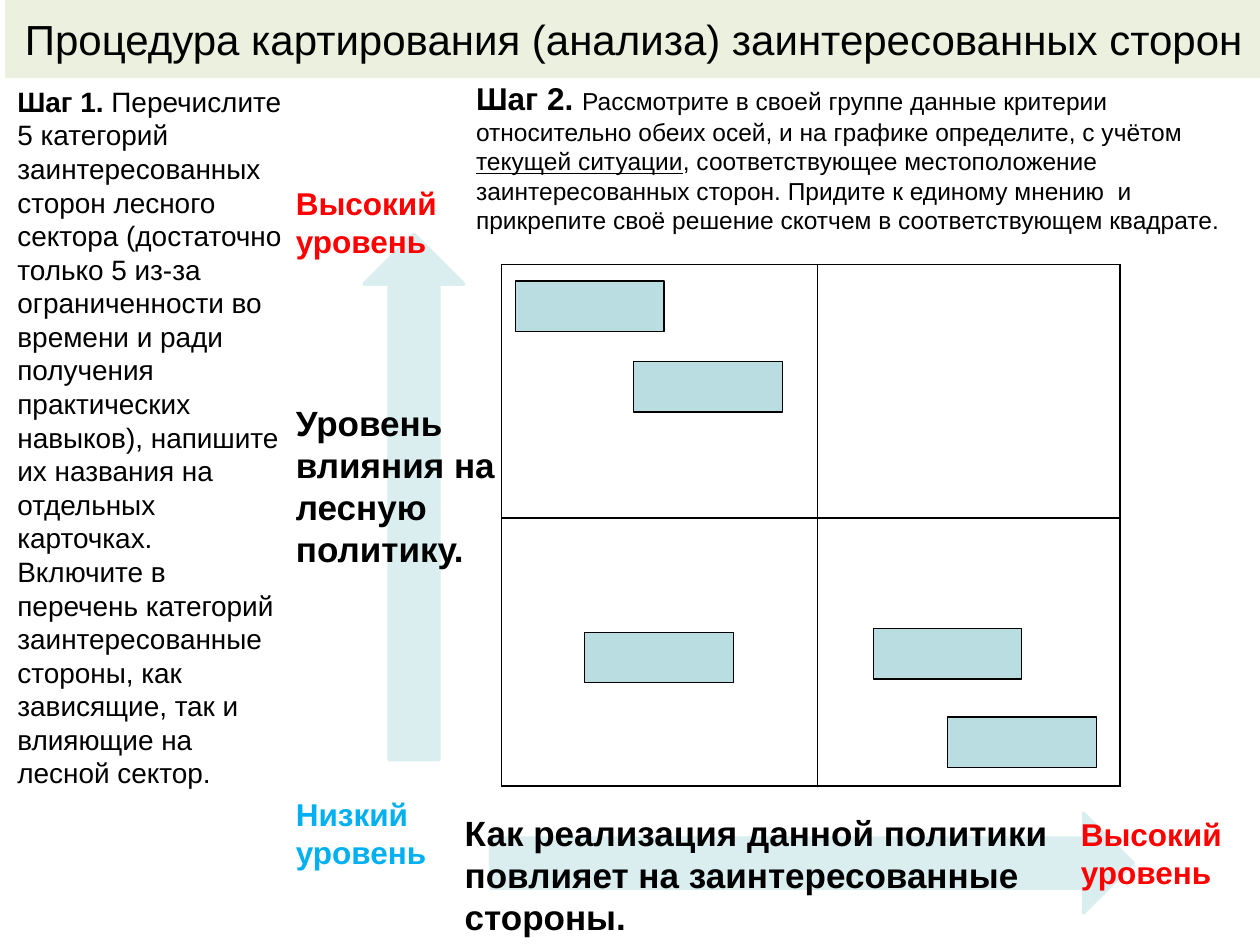
import pptx
import pptx.dml.color
import pptx.enum.shapes
import pptx.enum.text
import pptx.util
from lxml import etree
from pptx.util import Inches

COLORS = {
    "black": "000000",
    "white": "FFFFFF",
    "red": "FF0000",
    "blue": "00B0F0",
    "arrow": "DAEDEF",
    "card": "BADDE1",
    "banner": "EBF1DE",
}
FONT = "Arial"
NS = "http://schemas.openxmlformats.org/drawingml/2006/main"
SHAPE = pptx.enum.shapes.MSO_SHAPE


def rgb(name):
    return pptx.dml.color.RGBColor.from_string(COLORS[name])


class SlideBuilder:
    """Adds elements in the common style to one slide."""

    def __init__(self, slide):
        self.slide = slide

    def style_font(self, font, size, color="black", bold=False):
        font.name = FONT
        font.size = pptx.util.Pt(size)
        font.bold = bold
        font.color.rgb = rgb(color)

    def shape(self, kind, box, fill, line=None, line_width=1, rotation=0):
        sp = self.slide.shapes.add_shape(kind, *map(Inches, box))
        sp.shadow.inherit = False
        sp.rotation = rotation
        sp.fill.solid()
        sp.fill.fore_color.rgb = rgb(fill)
        if line:
            sp.line.color.rgb = rgb(line)
            sp.line.width = pptx.util.Pt(line_width)
        else:
            sp.line.fill.background()
        return sp

    def banner(self, box, text, size):
        sp = self.shape(SHAPE.RECTANGLE, box, "banner")
        p = sp.text_frame.paragraphs[0]
        p.text = text
        p.alignment = pptx.enum.text.PP_ALIGN.CENTER
        self.style_font(p.font, size)

    def text_box(self, box):
        tf = self.slide.shapes.add_textbox(*map(Inches, box)).text_frame
        tf.word_wrap = True
        return tf.paragraphs[0]

    def label(self, box, text, size, color="black"):
        p = self.text_box(box)
        p.text = text
        self.style_font(p.font, size, color, bold=True)

    def step(self, box, runs):
        """Add a paragraph from (text, size, bold, underline) runs."""
        p = self.text_box(box)
        for text, size, bold, underline in runs:
            r = p.add_run()
            r.text = text
            self.style_font(r.font, size, bold=bold)
            r.font.underline = underline

    def border_cell(self, cell, width):
        tc_pr = cell._tc.get_or_add_tcPr()
        for side in ("lnL", "lnR", "lnT", "lnB"):
            ln = etree.SubElement(tc_pr, f"{{{NS}}}{side}", w=str(pptx.util.Pt(width)))
            fill = etree.SubElement(ln, f"{{{NS}}}solidFill")
            etree.SubElement(fill, f"{{{NS}}}srgbClr", val=COLORS["black"])

    def grid(self, left, top, widths, heights):
        table = self.slide.shapes.add_table(
            len(heights), len(widths), Inches(left), Inches(top),
            Inches(sum(widths)), Inches(sum(heights))).table
        table.first_row = table.horz_banding = False
        for column, width in zip(table.columns, widths):
            column.width = Inches(width)
        for row, height in zip(table.rows, heights):
            row.height = Inches(height)
        for cell in table.iter_cells():
            self.border_cell(cell, 1)
            cell.fill.solid()
            cell.fill.fore_color.rgb = rgb("white")


def main():
    prs = pptx.Presentation()
    prs.slide_width, prs.slide_height = Inches(10), Inches(7.5)
    s = SlideBuilder(prs.slides.add_slide(prs.slide_layouts[6]))

    s.grid(3.98, 2.1, widths=(2.51, 2.4), heights=(2.01, 2.13))

    for box, rotation in (((2.89, 1.86, 0.79, 4.17), 0), ((6.05, 4.3, 0.79, 5.1), 90)):
        s.shape(SHAPE.UP_ARROW, box, "arrow", "arrow", 2, rotation)

    s.label((2.25, 3.14, 1.97, 1.45), "Уровень влияния на лесную политику.", 20)
    s.label((3.59, 6.39, 5.16, 1.11),
            "Как реализация данной политики повлияет на заинтересованные стороны.", 20)
    s.label((2.25, 6.26, 1.43, 0.71), "Низкий уровень", 18, "blue")
    for box in ((2.25, 1.41, 1.43, 0.71), (8.48, 6.42, 1.52, 0.71)):
        s.label(box, "Высокий уровень", 18, "red")

    s.step((0.04, 0.62, 2.3, 6.29), [
        ("Шаг 1. ", 16, True, False),
        ("Перечислите 5 категорий заинтересованных сторон лесного сектора "
         "(достаточно только 5 из-за ограниченности во времени и ради получения "
         "практических навыков), напишите их названия на отдельных карточках. "
         "Включите в перечень категорий заинтересованные стороны, как зависящие, "
         "так и влияющие на лесной сектор.", 16, False, False),
    ])
    s.step((3.68, 0.58, 6.3, 1.35), [
        ("Шаг 2. ", 18, True, False),
        ("Рассмотрите в своей группе данные критерии относительно обеих осей, "
         "и на графике определите, с учётом ", 14, False, False),
        ("текущей ситуации", 14, False, True),
        (", соответствующее местоположение заинтересованных сторон. Придите к "
         "единому мнению  и прикрепите своё решение скотчем в соответствующем "
         "квадрате.", 14, False, False),
    ])

    cards = ((4.09, 2.23), (5.03, 2.87), (4.64, 5.02), (6.93, 4.99), (7.52, 5.69))
    for left, top in cards:
        s.shape(SHAPE.RECTANGLE, (left, top, 1.18, 0.4), "card", "black", 0.75)

    s.banner((0.04, 0, 9.98, 0.62),
             "Процедура картирования (анализа) заинтересованных сторон", 24)

    prs.save("out.pptx")


if __name__ == "__main__":
    main()
